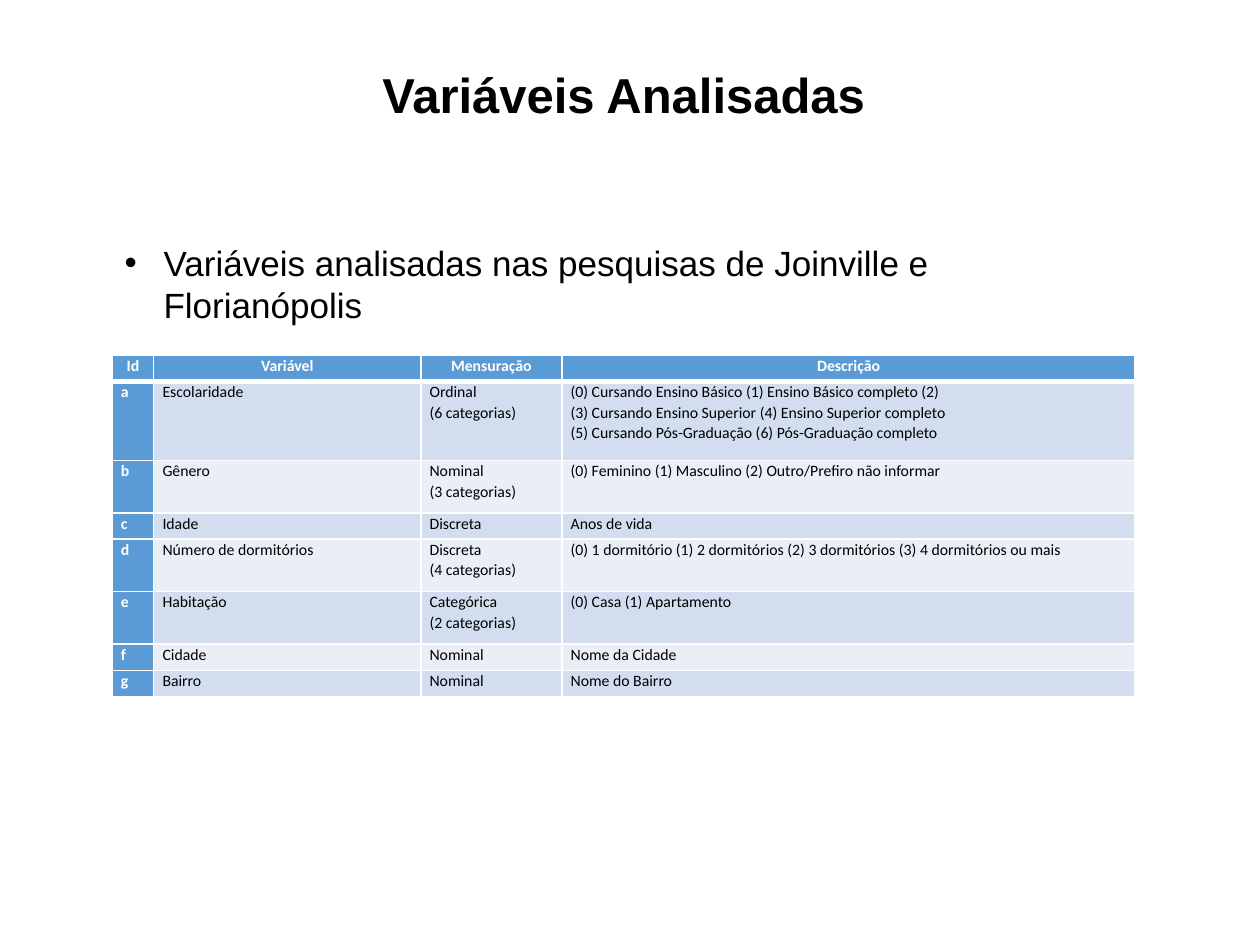
"""Build the slide listing the variables analysed in the two city surveys."""
from typing import NamedTuple

from lxml import etree
from pptx import Presentation, util as u
from pptx.dml.color import RGBColor
from pptx.enum import text as t
from pptx.oxml import ns

COLORS = {
    "ink": "000000",
    "white": "FFFFFF",
    "accent": "5B9BD5",
    "band_dark": "D2DEEF",
    "band_light": "EAEFF7",
}
TABLE_LEFT, TABLE_TOP, TABLE_HEIGHT = 0.89, 2.82, 2.71
COLUMN_WIDTHS = (0.33, 2.12, 1.12, 4.55)
HEADINGS = ("Id", "Variável", "Mensuração", "Descrição")


class Variable(NamedTuple):
    """One table row, with line breaks between the paragraphs of a cell."""
    key: str
    name: str
    measure: str
    description: str


class CellStyle(NamedTuple):
    """The look of one table cell."""
    fill: str
    ink: str
    bold: bool
    align: t.PP_ALIGN


VARIABLES = (
    Variable("a", "Escolaridade", "Ordinal\n(6 categorias)",
             "(0) Cursando Ensino Básico (1) Ensino Básico completo (2)\n"
             "(3) Cursando Ensino Superior (4) Ensino Superior completo\n"
             "(5) Cursando Pós-Graduação (6) Pós-Graduação completo"),
    Variable("b", "Gênero", "Nominal\n(3 categorias)",
             "(0) Feminino (1) Masculino (2) Outro/Prefiro não informar"),
    Variable("c", "Idade", "Discreta", "Anos de vida"),
    Variable("d", "Número de dormitórios", "Discreta\n(4 categorias)",
             "(0) 1 dormitório (1) 2 dormitórios (2) 3 dormitórios (3) 4 dormitórios ou mais"),
    Variable("e", "Habitação", "Categórica\n(2 categorias)", "(0) Casa (1) Apartamento"),
    Variable("f", "Cidade", "Nominal", "Nome da Cidade"),
    Variable("g", "Bairro", "Nominal", "Nome do Bairro"),
)
HEADER_STYLE = CellStyle("accent", "white", True, t.PP_ALIGN.CENTER)
KEY_STYLE = CellStyle("accent", "white", True, t.PP_ALIGN.LEFT)


def color(name: str) -> RGBColor:
    """Return a palette colour."""
    return RGBColor.from_string(COLORS[name])


def set_font(paragraph, face: str, size: float, ink: str, bold: bool) -> None:
    """Format a whole paragraph."""
    font = paragraph.font
    font.name, font.size, font.bold = face, u.Pt(size), bold
    font.color.rgb = color(ink)


def set_borders(cell, top: float, bottom: float) -> None:
    """Draw white borders, one point wide at the sides."""
    properties = cell._tc.get_or_add_tcPr()
    widths = {"lnL": 1, "lnR": 1, "lnT": top, "lnB": bottom}
    for position, (side, width) in enumerate(widths.items()):
        line = etree.Element(ns.qn(f"a:{side}"), w=str(u.Pt(width)))
        fill = etree.SubElement(line, ns.qn("a:solidFill"))
        etree.SubElement(fill, ns.qn("a:srgbClr"), val=COLORS["white"])
        properties.insert(position, line)


def fill_cell(cell, words: str, style: CellStyle) -> None:
    """Write and format one table cell."""
    cell.margin_left = cell.margin_right = u.Inches(0.07)
    cell.margin_top = cell.margin_bottom = 0
    cell.fill.solid()
    cell.fill.fore_color.rgb = color(style.fill)
    cell.text = words
    for paragraph in cell.text_frame.paragraphs:
        paragraph.alignment = style.align
        paragraph.line_spacing = 1.07
        set_font(paragraph, "Calibri", 9, style.ink, style.bold)


def cell_style(row: int, column: int) -> CellStyle:
    """Choose the look of a cell from its place in the grid."""
    if row == 0:
        return HEADER_STYLE
    if column == 0:
        return KEY_STYLE
    band = "band_dark" if row % 2 else "band_light"
    return CellStyle(band, "ink", False, t.PP_ALIGN.LEFT)


def add_variable_table(slide) -> None:
    """Add the table, each row as tall as its longest cell needs."""
    rows = (HEADINGS, *VARIABLES)
    line_counts = [max(words.count("\n") + 1 for words in row) for row in rows]
    frame = slide.shapes.add_table(
        len(rows), len(HEADINGS), u.Inches(TABLE_LEFT), u.Inches(TABLE_TOP),
        u.Inches(sum(COLUMN_WIDTHS)), u.Inches(TABLE_HEIGHT))
    table = frame.table
    for column, width in zip(table.columns, COLUMN_WIDTHS):
        column.width = u.Inches(width)
    for row_index, (row, lines) in enumerate(zip(rows, line_counts)):
        table.rows[row_index].height = u.Inches(TABLE_HEIGHT * lines / sum(line_counts))
        for column_index, words in enumerate(row):
            cell = table.cell(row_index, column_index)
            fill_cell(cell, words, cell_style(row_index, column_index))
            set_borders(cell, top=3 if row_index == 1 else 1,
                        bottom=3 if row_index == 0 else 1)


def set_title(slide, words: str) -> None:
    """Move and format the title placeholder."""
    title = slide.shapes.title
    title.left, title.top = u.Inches(0.46), u.Inches(0.46)
    title.width, title.height = u.Inches(8.98), u.Inches(0.57)
    frame = title.text_frame
    frame.text = words
    frame.vertical_anchor = t.MSO_ANCHOR.TOP
    frame.auto_size = t.MSO_AUTO_SIZE.SHAPE_TO_FIT_TEXT
    paragraph = frame.paragraphs[0]
    paragraph.alignment = t.PP_ALIGN.CENTER
    set_font(paragraph, "Arial", 28, "ink", True)


def add_bullet(slide, words: str) -> None:
    """Add the bulleted introduction above the table."""
    box = slide.shapes.add_textbox(
        u.Inches(TABLE_LEFT), u.Inches(1.87), u.Inches(6.98), u.Inches(0.77))
    frame = box.text_frame
    frame.word_wrap = True
    frame.auto_size = t.MSO_AUTO_SIZE.SHAPE_TO_FIT_TEXT
    paragraph = frame.paragraphs[0]
    paragraph.text = words
    properties = paragraph._p.get_or_add_pPr()
    indent = u.Inches(0.31)
    properties.set("marL", str(indent))
    properties.set("indent", str(-indent))
    etree.SubElement(properties, ns.qn("a:buFont"), typeface="Arial")
    etree.SubElement(properties, ns.qn("a:buChar"), char="•")
    set_font(paragraph, "Arial", 20, "ink", False)


def main() -> None:
    """Build and save the deck."""
    deck = Presentation()
    deck.slide_width, deck.slide_height = u.Inches(10), u.Inches(7.5)
    slide = deck.slides.add_slide(deck.slide_layouts[5])
    set_title(slide, "Variáveis Analisadas")
    add_variable_table(slide)
    add_bullet(slide, "Variáveis analisadas nas pesquisas de Joinville e Florianópolis")
    deck.save("out.pptx")


if __name__ == "__main__":
    main()
